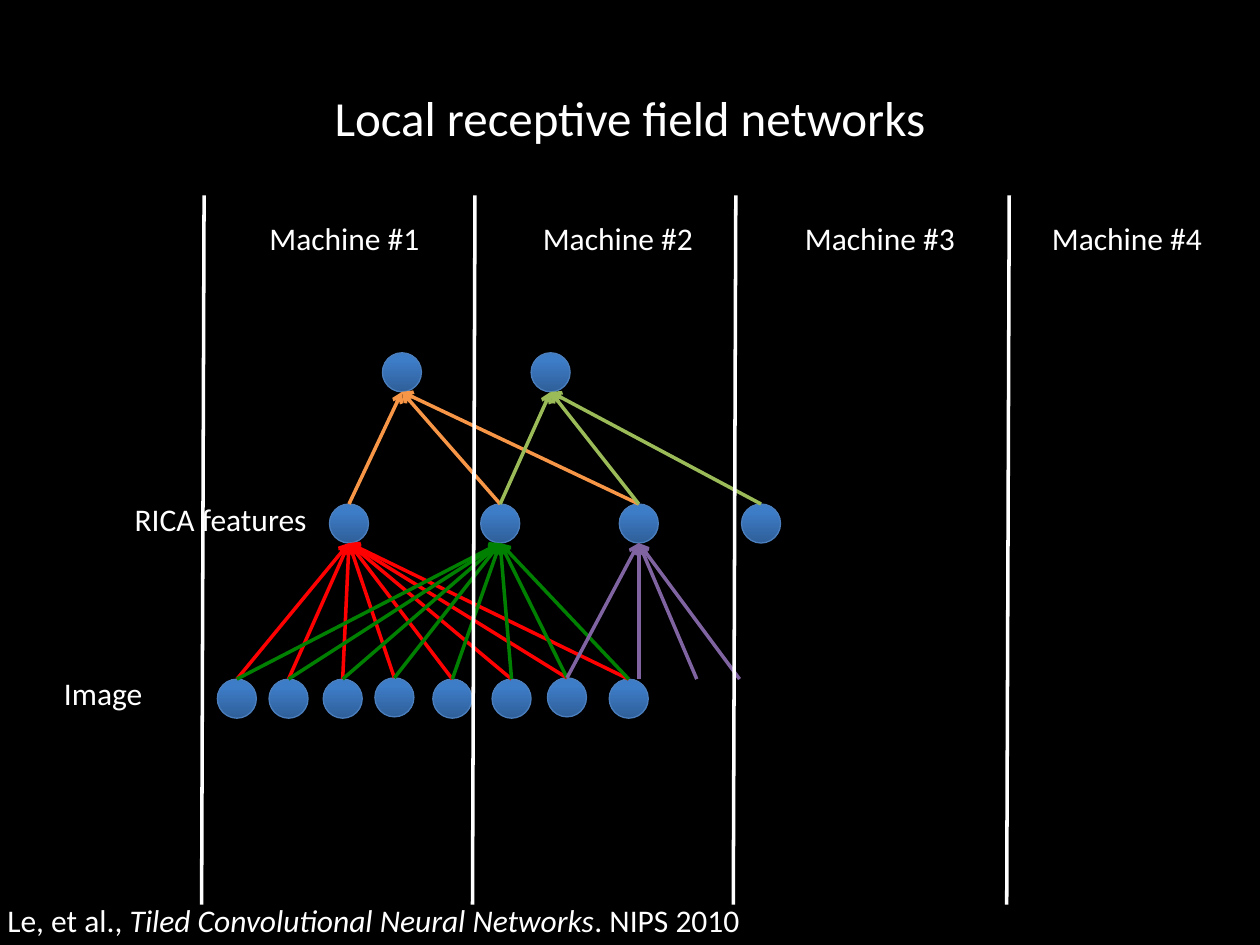
from pptx import Presentation
from pptx.dml.color import RGBColor
from pptx.enum.shapes import MSO_CONNECTOR, MSO_SHAPE
from pptx.enum.text import MSO_ANCHOR, MSO_AUTO_SIZE, PP_ALIGN
from pptx.oxml.ns import qn
from pptx.util import Inches, Pt
from lxml.etree import SubElement

BLACK = RGBColor(0x00, 0x00, 0x00)
WHITE = RGBColor(0xFF, 0xFF, 0xFF)
RED = RGBColor(0xFF, 0x00, 0x00)
GREEN = RGBColor(0x00, 0x80, 0x00)
PURPLE = RGBColor(0x80, 0x64, 0xA2)
ORANGE = RGBColor(0xF7, 0x96, 0x46)
OLIVE = RGBColor(0x9B, 0xBB, 0x59)
NODE_DARK = RGBColor(0x2F, 0x5F, 0x99)
NODE_LIGHT = RGBColor(0x3D, 0x7C, 0xC7)
NODE_EDGE = RGBColor(0x4B, 0x7E, 0xBC)

prs = Presentation()
prs.slide_width, prs.slide_height = Inches(10), Inches(7.5)
s = prs.slides.add_slide(prs.slide_layouts[6])
s.background.fill.solid()
s.background.fill.fore_color.rgb = BLACK


def add_text(text, x, y, w, h=0.4, size=18, align=PP_ALIGN.LEFT,
             anchor=MSO_ANCHOR.TOP, wrap=False, italic_part=None):
    """Add white text; italic_part is the index of the run set in italics."""
    tf = s.shapes.add_textbox(Inches(x), Inches(y), Inches(w), Inches(h)).text_frame
    tf.word_wrap = wrap
    tf.auto_size = MSO_AUTO_SIZE.NONE
    tf.vertical_anchor = anchor
    p = tf.paragraphs[0]
    p.alignment = align
    for i, part in enumerate([text] if isinstance(text, str) else text):
        r = p.add_run()
        r.text = part
        r.font.name, r.font.size = "Calibri", Pt(size)
        r.font.color.rgb = WHITE
        r.font.italic = i == italic_part


def add_line(x1, y1, x2, y2, color, arrow=False):
    c = s.shapes.add_connector(MSO_CONNECTOR.STRAIGHT, Inches(x1), Inches(y1),
                               Inches(x2), Inches(y2))
    c.line.color.rgb = color
    c.line.width = Pt(2)
    if arrow:
        SubElement(c.line._get_or_add_ln(), qn("a:tailEnd"), type="arrow")
    SubElement(c._element.spPr, qn("a:effectLst"))
    return c


# Layers of nodes: centre positions and tops
D = 0.31
IMAGE_Y, RICA_Y, TOP_Y = 5.39, 4.0, 2.8
layers = {
    IMAGE_Y: [1.88, 2.29, 2.72, 3.13, 3.59, 4.06, 4.5, 4.99],
    RICA_Y: [2.77, 3.97, 5.07, 6.04],
    TOP_Y: [3.19, 4.37],
}
nodes = {}
for y, centres in layers.items():
    nodes[y] = []
    for i, x in enumerate(centres):
        raised = 0.01 if y == IMAGE_Y and i in (3, 6) else 0
        sp = s.shapes.add_shape(MSO_SHAPE.OVAL, Inches(x - D / 2), Inches(y - raised),
                                Inches(D), Inches(D))
        sp.shadow.inherit = False
        sp.fill.gradient()
        sp.fill.gradient_angle = 90
        for stop, color, pos in zip(sp.fill.gradient_stops, (NODE_DARK, NODE_LIGHT), (0, 0.8)):
            stop.color.rgb, stop.position = color, pos
        sp.line.color.rgb = NODE_EDGE
        sp.line.width = Pt(0.75)
        nodes[y].append(sp)

# Receptive fields: lower layer, its nodes, upper layer, target node, colour
fields = [
    (IMAGE_Y, range(8), RICA_Y, 0, RED),
    (IMAGE_Y, range(8), RICA_Y, 1, GREEN),
    (IMAGE_Y, [6], RICA_Y, 2, PURPLE),
    (RICA_Y, range(3), TOP_Y, 0, ORANGE),
    (RICA_Y, range(1, 4), TOP_Y, 1, OLIVE),
]
for low, sources, high, target, color in fields:
    for i in sources:
        c = add_line(layers[low][i], low, layers[high][target], high + D, color, arrow=True)
        c.begin_connect(nodes[low][i], 0)

# Inputs of the third feature that start beyond the drawn image nodes
for x in (5.07, 5.53, 5.87):
    add_line(x, IMAGE_Y, layers[RICA_Y][2], RICA_Y + D, PURPLE, arrow=True)

# Title
add_text("Local receptive field networks", 0.5, 0.3, 9, 1.25, size=28,
         align=PP_ALIGN.CENTER, anchor=MSO_ANCHOR.MIDDLE, wrap=True)

# Machine columns
for n, (divider, label) in enumerate([(1.6, 2.04), (3.75, 4.21), (5.82, 6.29), (7.99, 8.25)], 1):
    add_line(divider, 7.18, divider + 0.02, 1.55, WHITE)
    add_text(f"Machine #{n}", label, 1.69, 1.4)

# Layer labels and citation
add_text("RICA features", 0.97, 3.92, 1.59)
add_text("Image", 0.41, 5.3, 0.83)
add_text(["Le, et al., ", "Tiled Convolutional Neural Networks", ". NIPS 2010"],
         -0.04, 7.1, 7.45, wrap=True, italic_part=1)

prs.save("out.pptx")
